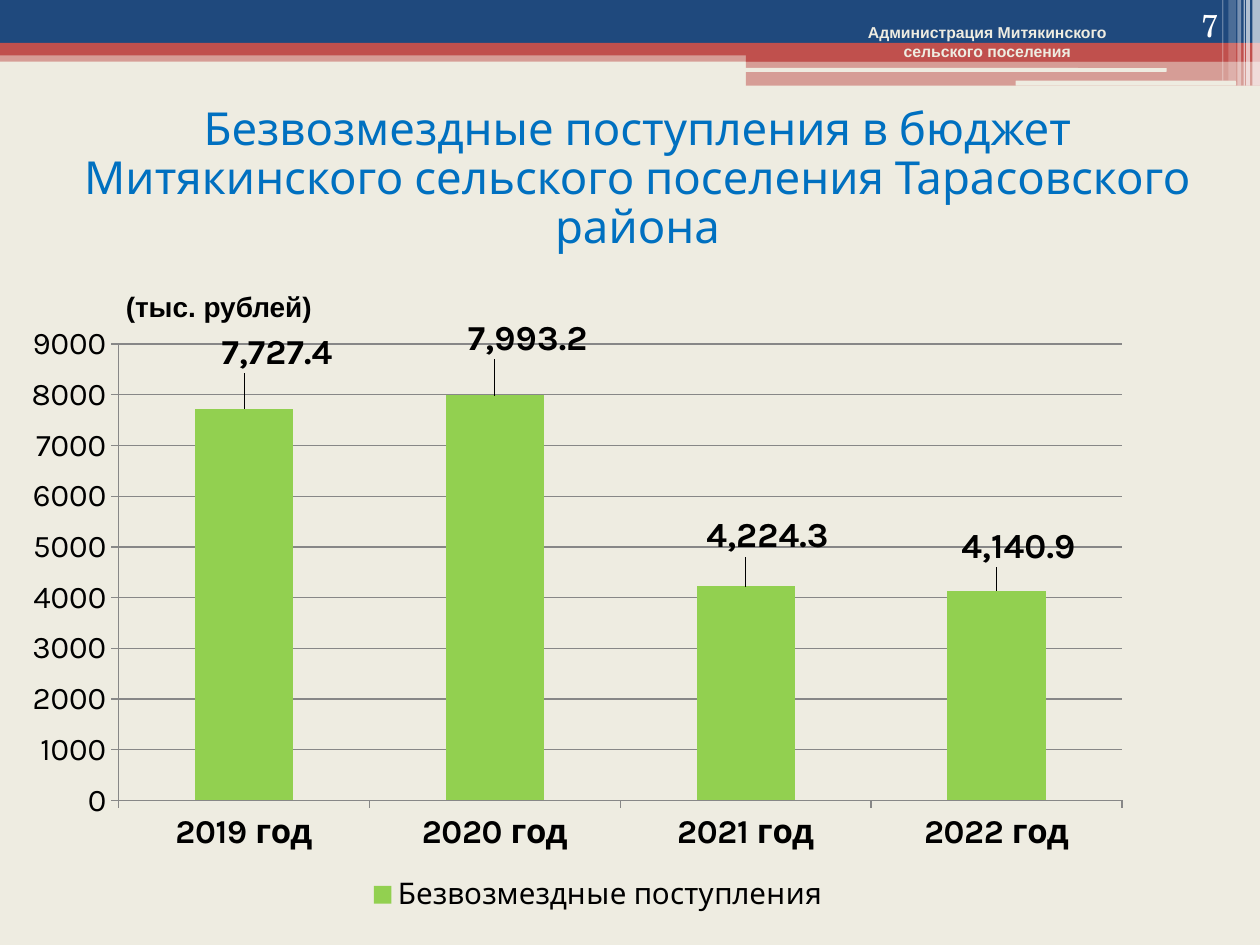
from lxml import etree
from pptx import Presentation
from pptx.chart.data import CategoryChartData as Data
from pptx.dml.color import RGBColor
from pptx.enum.chart import XL_CHART_TYPE as Kind, XL_LABEL_POSITION as Spot
from pptx.enum.chart import XL_LEGEND_POSITION as Side, XL_TICK_MARK as Tick
from pptx.enum.shapes import MSO_SHAPE as Form
from pptx.enum.text import MSO_ANCHOR as Anchor, PP_ALIGN as Align
from pptx.oxml import parse_xml
from pptx.oxml.ns import nsdecls, qn
from pptx.util import Inches, Pt

NAVY, RED, SAND, WHITE, BLACK = "1F497D", "C0504D", "EEECE1", "FFFFFF", "000000"
BLUE, GREEN, GREY = "0070C0", "92D050", "878787"
SANS, SERIF, BODY = "Arial", "TeX Gyre Schola", "Karla"

BANDS = [
    (0, 0.4, 10, 0.09, RED, 50),
    (0, 0, 10, 0.34, NAVY, 100),
    (0, 0.34, 10, 0.1, RED, 100),
    (5.92, 0.39, 4.08, 0.1, RED, 100),
    (5.92, 0.48, 4.08, 0.2, RED, 50),
]
SLITS = [(5.91, 0.54, 3.35, 0.03), (8.06, 0.64, 1.75, 0.04)]
STRIPES = [
    (9.94, 0.06, 0.68, 65),
    (9.89, 0.03, 0.68, 65),
    (9.87, 0.01, 0.68, 60),
    (9.82, 0.03, 0.68, 40),
    (9.75, 0.06, 0.64, 20),
    (9.7, 0.01, 0.64, 30),
]
YEARS = ["2019 год", "2020 год", "2021 год", "2022 год"]
SUMS = [7727.4, 7993.2, 4224.3, 4140.9]
SHIFTS = [(0.03, -0.05), (0.03, -0.05), (0.02, -0.04), (0.02, -0.03)]


def tint(hue):
    """Turn a hex string into a colour."""
    return RGBColor.from_string(hue)


def paint(fill, hue, alpha=100):
    """Fill with one colour at a percentage of opacity."""
    fill.solid()
    fill.fore_color.rgb = tint(hue)
    if alpha < 100:
        node = fill._xPr.find(qn("a:solidFill"))[0]
        etree.SubElement(node, qn("a:alpha")).set("val", str(alpha * 1000))


def style(font, face, size, hue=BLACK, bold=False):
    """Set the looks of a font."""
    font.name, font.size, font.bold = face, Pt(size), bold
    font.color.rgb = tint(hue)


def add_bar(slide, box, hue, alpha=100, form=Form.RECTANGLE):
    """Draw a plain block without outline."""
    bar = slide.shapes.add_shape(form, *map(Inches, box))
    bar.shadow.inherit = False
    bar.line.fill.background()
    paint(bar.fill, hue, alpha)


def add_head(slide):
    """Draw the banner across the top."""
    for *box, hue, alpha in BANDS:
        add_bar(slide, box, hue, alpha)
    for box in SLITS:
        add_bar(slide, box, SAND, form=Form.ROUNDED_RECTANGLE)
    for left, width, height, alpha in STRIPES:
        add_bar(slide, (left, 0, width, height), WHITE, alpha)


def add_title(slide, lines):
    """Place the title with a break between its lines."""
    title = slide.shapes.title
    title.left, title.top, title.width, title.height = map(Inches, (0.12, 0.84, 9.88, 1.17))
    frame = title.text_frame
    frame.word_wrap, frame.vertical_anchor = True, Anchor.MIDDLE
    par = frame.paragraphs[0]
    par.alignment, par.line_spacing = Align.CENTER, 0.9
    for i, line in enumerate(lines):
        if i:
            par.add_line_break()
        run = par.add_run()
        run.text = line
        style(run.font, BODY, 26, BLUE)


def add_text(slide, box, lines, face, size, hue, bold=True, align=Align.LEFT, anchor=Anchor.TOP):
    """Add a text box with a paragraph for each line."""
    frame = slide.shapes.add_textbox(*map(Inches, box)).text_frame
    frame.word_wrap, frame.vertical_anchor = True, anchor
    for i, line in enumerate(lines):
        par = frame.add_paragraph() if i else frame.paragraphs[0]
        par.alignment = align
        run = par.add_run()
        run.text = line
        style(run.font, face, size, hue, bold)


def make_layout(modes, **sizes):
    """Build a manual chart layout."""
    parts = [f'<c:{k} val="{v}"/>' for k, v in {**modes, **sizes}.items()]
    return parse_xml(
        f'<c:layout {nsdecls("c")}><c:manualLayout>{"".join(parts)}</c:manualLayout></c:layout>'
    )


def set_layout(node, layout, prior):
    """Put a layout after the named child in place of any other."""
    for old in node.findall(qn("c:layout")):
        node.remove(old)
    if prior:
        node.find(qn(prior)).addnext(layout)
    else:
        node.insert(0, layout)


def set_axis(axis, size, bold=False):
    """Style the line, ticks and labels of an axis."""
    style(axis.tick_labels.font, BODY, size, bold=bold)
    axis.major_tick_mark, axis.minor_tick_mark = Tick.OUTSIDE, Tick.NONE
    axis.format.line.color.rgb = tint(GREY)
    axis.format.line.width = Pt(0.75)


def set_labels(plot, series):
    """Show the values above the columns, each moved by its shift."""
    plot.has_data_labels = True
    for i, (x, y) in enumerate(SHIFTS):
        label = series.points[i].data_label
        style(label.font, BODY, 20, bold=True)
        label.position = Spot.OUTSIDE_END
        node = series._element.findall(".//" + qn("c:dLbl"))[i]
        set_layout(node, make_layout({}, x=x, y=y), "c:idx")
    for labels in (plot.data_labels, series.data_labels):
        labels.show_value = True
        labels.number_format, labels.number_format_is_linked = "#,##0.0", False
        style(labels.font, BODY, 20, bold=True)


def add_chart(slide):
    """Add the column chart of yearly receipts."""
    data = Data(number_format="#,##0.0")
    data.categories = YEARS
    data.add_series("Безвозмездные поступления", SUMS)
    box = map(Inches, (0.25, 2.49, 8.83, 4.83))
    chart = slide.shapes.add_chart(Kind.COLUMN_CLUSTERED, *box, data).chart
    chart.has_title = False
    style(chart.font, SERIF, 18)
    plot = chart.plots[0]
    plot.gap_width, plot.vary_by_categories = 155, False
    series = plot.series[0]
    paint(series.format.fill, GREEN)
    set_labels(plot, series)
    set_axis(chart.category_axis, 19, True)
    values = chart.value_axis
    set_axis(values, 18)
    values.minimum_scale, values.maximum_scale, values.major_unit = 0, 9000, 1000
    values.tick_labels.number_format = "General"
    values.tick_labels.number_format_is_linked = False
    values.major_gridlines.format.line.color.rgb = tint(GREY)
    values.major_gridlines.format.line.width = Pt(0.75)
    chart.has_legend = True
    legend = chart.legend
    legend.position, legend.include_in_layout = Side.RIGHT, False
    style(legend.font, BODY, 17)
    edges = {"xMode": "edge", "yMode": "edge"}
    spot = make_layout(edges, x=0.29, y=0.92, w=0.43, h=0.07)
    set_layout(legend._element, spot, "c:legendPos")
    area = chart._chartSpace.find(".//" + qn("c:plotArea"))
    inner = {"layoutTarget": "inner", **edges}
    set_layout(area, make_layout(inner, x=0.07, y=0.05, w=0.91, h=0.75), None)


def main():
    """Build and save the slide."""
    deck = Presentation()
    deck.slide_width, deck.slide_height = Inches(10), Inches(7.5)
    slide = deck.slides.add_slide(deck.slide_layouts[5])
    paint(slide.background.fill, SAND)
    add_head(slide)
    add_title(slide, [
        "Безвозмездные поступления в бюджет",
        "Митякинского сельского поселения Тарасовского района",
    ])
    add_text(slide, (0.9, 2.25, 1.81, 0.37), ["(тыс. рублей)"], SANS, 16, BLACK)
    add_text(slide, (6.28, 0.13, 3.11, 0.4), ["Администрация Митякинского", "сельского поселения"],
             SANS, 9, SAND, align=Align.CENTER)
    add_chart(slide)
    add_text(slide, (8.94, 0, 0.83, 0.4), ["7"], SERIF, 18, WHITE, False, Align.RIGHT, Anchor.BOTTOM)
    deck.save("out.pptx")


if __name__ == "__main__":
    main()
